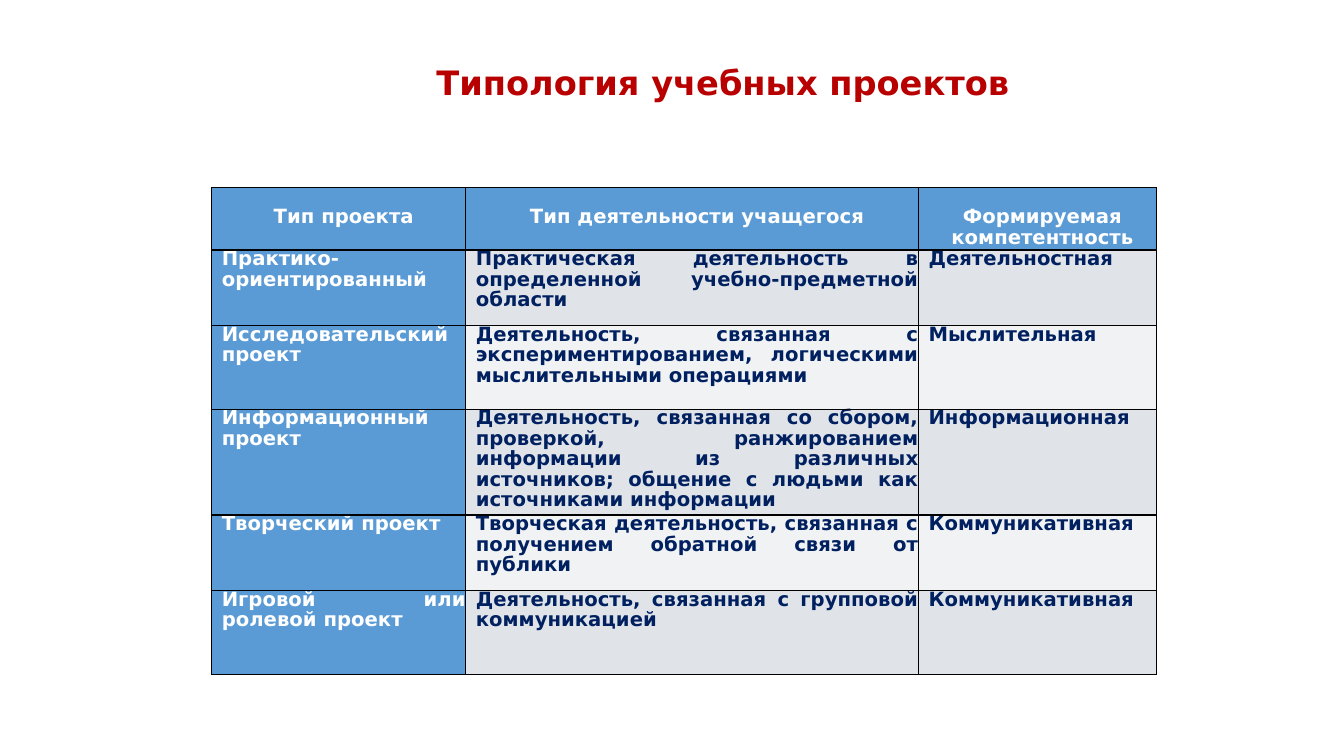
from lxml.etree import SubElement
from pptx import Presentation
from pptx.dml.color import RGBColor
from pptx.enum.text import MSO_ANCHOR, PP_ALIGN
from pptx.oxml.ns import qn
from pptx.util import Inches, Pt

# Content
TITLE = "Типология учебных проектов"
ROWS = [
    ("Тип проекта", "Тип деятельности учащегося", "Формируемая компетентность"),
    ("Практико-ориентированный",
     "Практическая деятельность в определенной учебно-предметной области",
     "Деятельностная"),
    ("Исследовательский проект",
     "Деятельность, связанная с экспериментированием, логическими "
     "мыслительными операциями",
     "Мыслительная"),
    ("Информационный проект",
     "Деятельность, связанная со сбором, проверкой, ранжированием информации "
     "из различных источников; общение с людьми как источниками информации",
     "Информационная"),
    ("Творческий проект",
     "Творческая деятельность, связанная с получением обратной связи от публики",
     "Коммуникативная"),
    ("Игровой или ролевой проект",
     "Деятельность, связанная с групповой коммуникацией",
     "Коммуникативная"),
]

# Layout in inches, type in points
COLS = [2.52, 4.49, 2.36]
HEIGHTS = [0.62, 0.75, 0.83, 1.05, 0.75, 0.83]
TABLE_LEFT, TABLE_TOP = 2.1, 1.86
FONT, LEADING = "DejaVu Sans", 14.6
BLUE, WHITE, NAVY, RED, BLACK = "5B9BD5", "FFFFFF", "002060", "B90000", "000000"
BANDS = ["F0F2F4", "E0E4E9"]


def color(code):
    return RGBColor.from_string(code)


def write(tf, text, size, code, align):
    p = tf.paragraphs[0]
    p.alignment = align
    p.line_spacing = Pt(LEADING)
    r = p.add_run()
    r.text = text
    r.font.name = FONT
    r.font.size = Pt(size)
    r.font.bold = True
    r.font.color.rgb = color(code)
    return p


def add_borders(cell):
    tcPr = cell._tc.get_or_add_tcPr()
    for side in ("a:lnL", "a:lnR", "a:lnT", "a:lnB"):
        ln = SubElement(tcPr, qn(side), w=str(Pt(1)))
        SubElement(SubElement(ln, qn("a:solidFill")), qn("a:srgbClr"), val=BLACK)


prs = Presentation()
prs.slide_width, prs.slide_height = Inches(13.33), Inches(7.5)
slide = prs.slides.add_slide(prs.slide_layouts[6])

# Table
table = slide.shapes.add_table(
    len(ROWS), len(COLS), Inches(TABLE_LEFT), Inches(TABLE_TOP),
    Inches(sum(COLS)), Inches(sum(HEIGHTS))).table
for col, width in zip(table.columns, COLS):
    col.width = Inches(width)
for row, height in zip(table.rows, HEIGHTS):
    row.height = Inches(height)

for i, texts in enumerate(ROWS):
    for j, text in enumerate(texts):
        cell = table.cell(i, j)
        header, heading = i == 0, i == 0 or j == 0
        cell.margin_left = Inches(0.1)
        cell.margin_right = cell.margin_bottom = 0
        cell.margin_top = Pt(LEADING) if header else 0
        cell.vertical_anchor = MSO_ANCHOR.TOP
        add_borders(cell)
        cell.fill.solid()
        cell.fill.fore_color.rgb = color(BLUE if heading else BANDS[i % 2])
        write(cell.text_frame, text, 14, WHITE if heading else NAVY,
              PP_ALIGN.CENTER if header else PP_ALIGN.JUSTIFY)

# Title
sp = slide.shapes.add_textbox(Inches(3.36), Inches(0.76), Inches(7.32), Inches(0.53))
tf = sp.text_frame
tf.word_wrap = True
p = write(tf, TITLE, 24, RED, PP_ALIGN.CENTER)
p._p.get_or_add_pPr().set("indent", str(Inches(0.3)))

prs.save("out.pptx")
